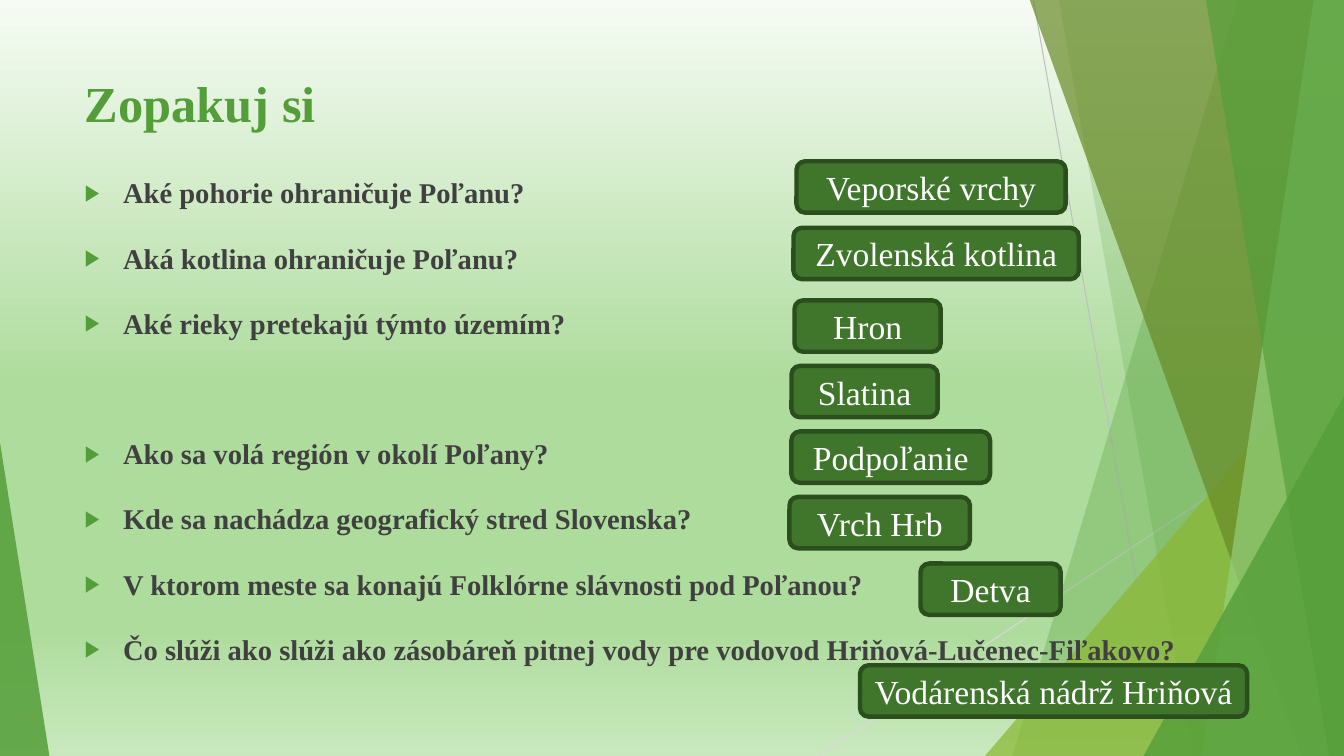
import pptx
import pptx.util
from pptx.dml.color import RGBColor
from pptx.enum.shapes import MSO_CONNECTOR, MSO_SHAPE
from pptx.enum.text import MSO_ANCHOR, MSO_AUTO_SIZE, PP_ALIGN
from pptx.oxml import parse_xml
from pptx.oxml.ns import nsdecls, qn
from pptx.util import Inches, Pt
from lxml import etree

GREEN = RGBColor(0x54, 0x9E, 0x39)
LIME = RGBColor(0x8A, 0xB8, 0x33)
OLIVE = RGBColor(0x67, 0x8A, 0x26)
PALE = RGBColor(0x93, 0xD0, 0x7D)
DARK = RGBColor(0x3F, 0x76, 0x2B)
EDGE = RGBColor(0x2A, 0x4F, 0x1C)
INK = RGBColor(0x40, 0x40, 0x40)
WHITE = RGBColor(0xFF, 0xFF, 0xFF)
GREY = RGBColor(0xBF, 0xBF, 0xBF)
SILVER = RGBColor(0xD9, 0xD9, 0xD9)
SKY = [(0, "F6FBF4"), (51, "AEDC9D"), (83, "AEDC9D"), (100, "C9E8BE")]
TOP, BASE, RIGHT = -0.01, 7.5, 13.33

# Left, top, width and text of each answer
ANSWERS = [
    (7.9, 1.6, 2.67, "Veporské vrchy"),
    (7.87, 2.26, 2.83, "Zvolenská kotlina"),
    (7.88, 2.98, 1.45, "Hron"),
    (7.85, 3.63, 1.45, "Slatina"),
    (7.85, 4.28, 1.97, "Podpoľanie"),
    (7.83, 4.93, 1.79, "Vrch Hrb"),
    (9.13, 5.59, 1.39, "Detva"),
    (8.53, 6.6, 3.84, "Vodárenská nádrž Hriňová"),
]
# Space before and text of each question; the wide gap leaves room for a second river
GAP, WIDE = 9.8, 56.5
ASKS = [
    (0, "Aké pohorie ohraničuje Poľanu?"),
    (GAP, "Aká kotlina ohraničuje Poľanu?"),
    (GAP, "Aké rieky pretekajú týmto územím?"),
    (WIDE, "Ako sa volá región v okolí Poľany?"),
    (GAP, "Kde sa nachádza geografický stred Slovenska?"),
    (GAP, "V ktorom meste sa konajú Folklórne slávnosti pod Poľanou?"),
    (GAP, "Čo slúži ako slúži ako zásobáreň pitnej vody pre vodovod "
          "Hriňová-Lučenec-Fiľakovo?"),
]


class Deck:
    face = "Times New Roman"

    def __init__(self):
        self.prs = pptx.Presentation()
        self.prs.slide_width = Inches(RIGHT)
        self.prs.slide_height = Inches(BASE)
        self.slide = self.prs.slides.add_slide(self.prs.slide_layouts[1])
        self.shapes = self.slide.shapes

    def backdrop(self, stops):
        fill = self.slide.background.fill
        fill.gradient()
        grad = self.slide.element.find(".//" + qn("a:gradFill"))
        for kid in list(grad):
            grad.remove(kid)
        marks = "".join(f'<a:gs pos="{pos * 1000}"><a:srgbClr val="{tint}"/></a:gs>'
                        for pos, tint in stops)
        grad.append(parse_xml(f'<a:gsLst {nsdecls("a")}>{marks}</a:gsLst>'))
        grad.append(parse_xml(f'<a:lin {nsdecls("a")} ang="5400000" scaled="0"/>'))

    def line(self, start, end, tint):
        ends = [Inches(v) for v in start + end]
        line = self.shapes.add_connector(MSO_CONNECTOR.STRAIGHT, *ends)
        line.line.color.rgb = tint
        line.line.width = Pt(0.75)
        etree.SubElement(line._element.spPr, qn("a:effectLst"))

    def tint(self, shape, tint, alpha):
        shape.shadow.inherit = False
        shape.line.fill.background()
        shape.fill.solid()
        shape.fill.fore_color.rgb = tint
        node = shape._element.spPr.find(".//" + qn("a:srgbClr"))
        etree.SubElement(node, qn("a:alpha")).set("val", str(alpha * 1000))

    def band(self, points, tint, alpha):
        points = [(Inches(x), Inches(y)) for x, y in points]
        form = self.shapes.build_freeform(*points[0])
        form.add_line_segments(points[1:], close=True)
        self.tint(form.convert_to_shape(), tint, alpha)

    def wedge(self, box, peak, tint, alpha):
        shape = self.shapes.add_shape(MSO_SHAPE.ISOSCELES_TRIANGLE, *map(Inches, box))
        shape.adjustments[0] = peak
        self.tint(shape, tint, alpha)

    def font(self, para, size, tint, bold=False):
        para.font.name = self.face
        para.font.size = Pt(size)
        para.font.bold = bold
        para.font.color.rgb = tint

    def place(self, holder, box):
        holder.left, holder.top, holder.width, holder.height = map(Inches, box)
        self.shapes._spTree.append(holder._element)  # in front of the bands
        frame = holder.text_frame
        frame.auto_size = MSO_AUTO_SIZE.NONE
        frame.vertical_anchor = MSO_ANCHOR.TOP
        frame.word_wrap = True
        return frame

    def title(self, text, box):
        frame = self.place(self.shapes.title, box)
        frame.text = text
        para = frame.paragraphs[0]
        para.alignment = PP_ALIGN.LEFT
        self.font(para, 36, GREEN, True)

    def list(self, items, box):
        frame = self.place(self.slide.placeholders[1], box)
        for i, (gap, text) in enumerate(items):
            para = frame.add_paragraph() if i else frame.paragraphs[0]
            para.text = text
            para.line_spacing = 1.5
            para.space_before = Pt(gap)
            self.bullet(para)
            self.font(para, 20.4, INK, True)

    def bullet(self, para):
        props = para._p.get_or_add_pPr()
        props.set("marL", str(Inches(0.38)))
        props.set("indent", str(-Inches(0.38)))
        for mark in (f'<a:buClr {nsdecls("a")}><a:srgbClr val="{GREEN}"/></a:buClr>',
                     f'<a:buSzPct {nsdecls("a")} val="80000"/>',
                     f'<a:buChar {nsdecls("a")} char="▶"/>'):
            props.append(parse_xml(mark))

    def answer(self, left, top, width, text):
        box = map(Inches, (left, top, width, 0.51))
        shape = self.shapes.add_shape(MSO_SHAPE.ROUNDED_RECTANGLE, *box)
        shape.shadow.inherit = False
        shape.fill.solid()
        shape.fill.fore_color.rgb = DARK
        shape.line.color.rgb = EDGE
        shape.line.width = Pt(3.15)
        frame = shape.text_frame
        frame.word_wrap = False
        frame.vertical_anchor = MSO_ANCHOR.MIDDLE
        frame.text = text
        para = frame.paragraphs[0]
        para.alignment = PP_ALIGN.CENTER
        self.font(para, 24, WHITE)


def main():
    deck = Deck()

    # Backdrop with thin lines and see-through bands
    deck.backdrop(SKY)
    deck.line((10.25, 0), (11.58, BASE), GREY)
    deck.line((RIGHT, 4.03), (8.12, BASE), SILVER)

    def band(head, foot, tint, alpha):
        deck.band([(head, TOP), (RIGHT, TOP), (RIGHT, BASE), (foot, BASE)], tint, alpha)

    band(12.28, 10.04, GREEN, 30)
    band(10.5, 11.83, GREEN, 20)
    deck.wedge((9.77, 3.33, 3.56, 4.17), 1, LIME, 72)
    band(10.21, 12.91, OLIVE, 70)
    band(13.03, 11.92, PALE, 70)
    band(11.96, 13.18, GREEN, 65)
    deck.wedge((11.34, 3.93, 1.99, 3.57), 1, GREEN, 80)
    deck.wedge((0, 4.39, 0.49, 3.11), 0, GREEN, 85)

    # Title and questions
    deck.title("Zopakuj si", (0.74, 0.67, 9.4, 1.44))
    deck.list(ASKS, (0.74, 1.52, 11.41, 5.65))

    # Answers
    for item in ANSWERS:
        deck.answer(*item)

    deck.prs.save("out.pptx")


if __name__ == "__main__":
    main()
